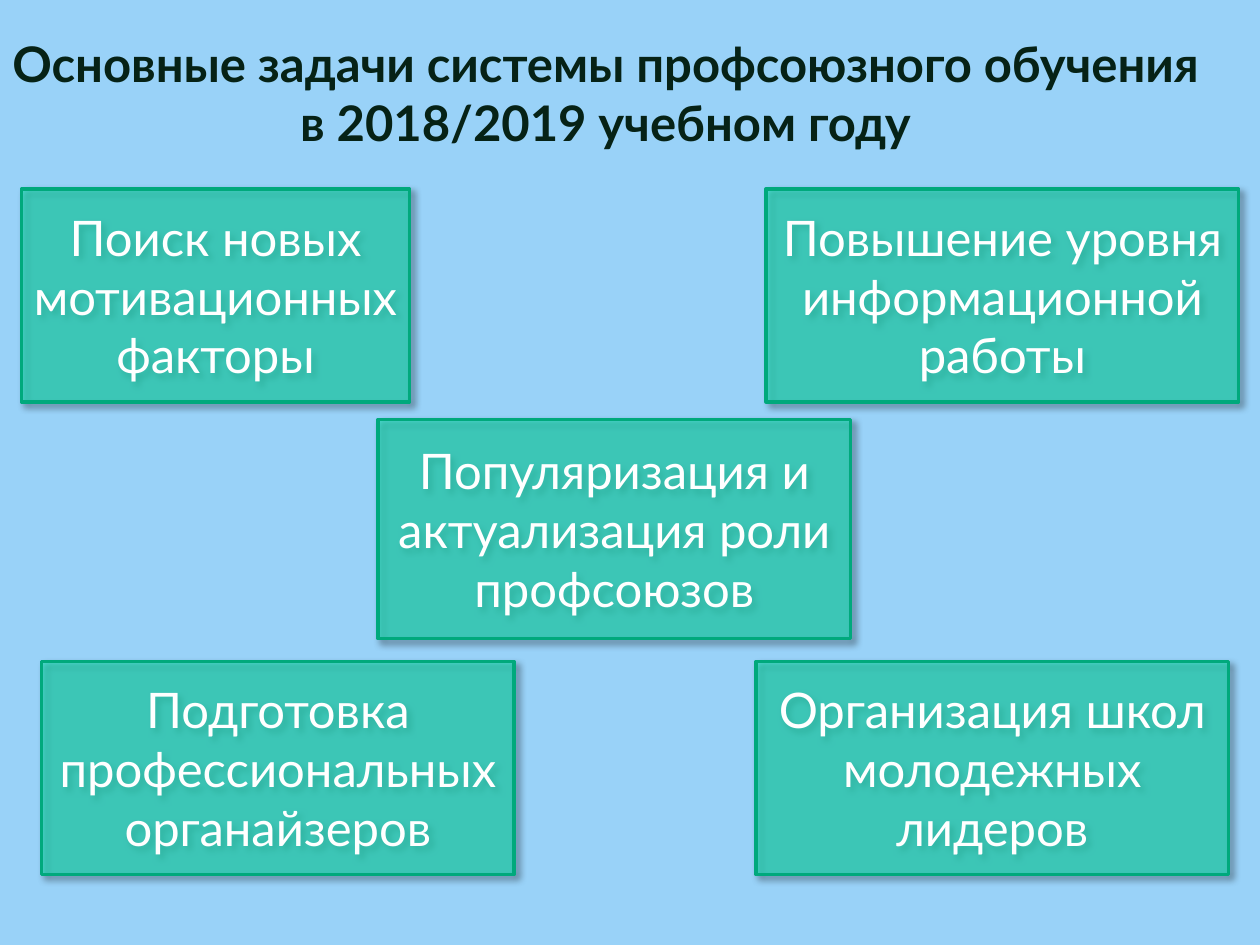
from lxml.etree import SubElement as Sub
from pptx import Presentation
from pptx.dml.color import RGBColor
from pptx.enum.shapes import MSO_SHAPE as Kind
from pptx.enum.text import MSO_ANCHOR as Anchor, PP_ALIGN as Align
from pptx.oxml.ns import qn
from pptx.util import Inches, Pt


def paint(target, color):
    """Give a fill a solid colour."""
    target.solid()
    target.fore_color.rgb = RGBColor.from_string(color)


def write(shape, text, color, anchor, bold=False):
    frame = shape.text_frame
    frame.text = text
    frame.word_wrap = True
    frame.vertical_anchor = anchor
    frame.margin_left = frame.margin_right = Inches(0.05)
    par = frame.paragraphs[0]
    par.alignment = Align.CENTER
    font = par.runs[0].font
    font.name, font.size, font.bold = "Lato", Pt(28), bold
    paint(font.fill, color)


prs = Presentation()
prs.slide_width, prs.slide_height = Inches(10), Inches(7.5)
slide = prs.slides.add_slide(prs.slide_layouts[6])
paint(slide.background.fill, "99D2F8")

# Rows of the layout: top and height
upper, middle, lower = (1.5, 1.69), (3.33, 1.74), (5.25, 1.69)
wide = 3.75
tasks = [
    (0.17, 3.08, upper, "Поиск новых мотивационных факторы"),
    (3, wide, middle, "Популяризация и актуализация роли профсоюзов"),
    (0.33, wide, lower, "Подготовка профессиональных органайзеров"),
    (6, wide, lower, "Организация школ молодежных лидеров"),
    (6.08, wide, upper, "Повышение уровня информационной работы"),
]

for left, width, (top, height), text in tasks:
    box = slide.shapes.add_shape(
        Kind.RECTANGLE, *map(Inches, (left, top, width, height)))
    paint(box.fill, "00E4A8")
    tint = box.fill._xPr.find(qn("a:solidFill"))[0]
    Sub(tint, qn("a:alpha"), val="50000")
    paint(box.line.fill, "00A97C")
    box.line.width = Pt(2)

    # Soft shadow towards the lower right
    box.shadow.inherit = False
    effects = box._element.spPr.find(qn("a:effectLst"))
    shade = Sub(effects, qn("a:outerShdw"), blurRad=str(Pt(4)),
                dist=str(Pt(3)), dir="2700000", algn="tl", rotWithShape="0")
    black = Sub(shade, qn("a:srgbClr"), val="000000")
    Sub(black, qn("a:alpha"), val="40000")

    write(box, text, "FFFFFF", Anchor.MIDDLE)

title = slide.shapes.add_textbox(*map(Inches, (0, 0.25, 9.61, 1)))
write(title, "Основные задачи системы профсоюзного обучения в 2018/2019 учебном году",
      "062216", Anchor.BOTTOM, bold=True)

prs.save("out.pptx")
